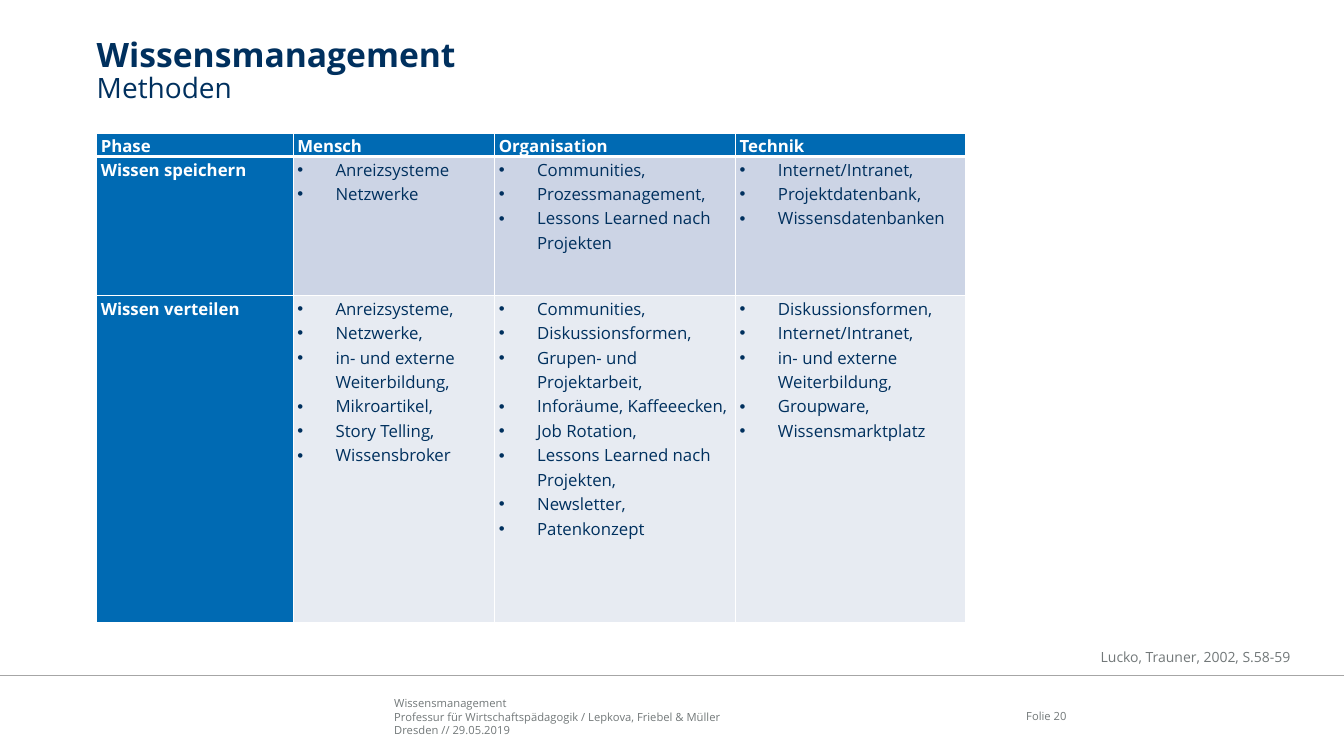
from dataclasses import dataclass

from lxml import etree
from pptx import Presentation
from pptx.dml.color import RGBColor
from pptx.enum.shapes import MSO_CONNECTOR
from pptx.enum.text import MSO_ANCHOR, PP_ALIGN
from pptx.oxml.ns import qn
from pptx.util import Emu, Inches, Pt

STRAIGHT = MSO_CONNECTOR.STRAIGHT
TOP, MIDDLE = MSO_ANCHOR.TOP, MSO_ANCHOR.MIDDLE
LEFT, RIGHT = PP_ALIGN.LEFT, PP_ALIGN.RIGHT

FONT = "Open Sans"
NAVY, BLUE, GREY, RULE, WHITE = "00305E", "006AB3", "727879", "A6A6A6", "FFFFFF"
BAND_FILLS = ["CCD4E5", "E7EBF2"]
INDENT = Inches(0.38)

# Percentages of the slide's width and height
MARGIN, TABLE_TOP, RULE_Y = 7.2, 17.6, 89.33
COLUMNS = [14.62, 15, 17.92, 17.1]
ROWS = [3.1, 18.4, 43.2]

HEADINGS = ["Phase", "Mensch", "Organisation", "Technik"]
PHASES = {
    "Wissen speichern": [
        ["Anreizsysteme", "Netzwerke"],
        ["Communities,", "Prozessmanagement,", "Lessons Learned nach Projekten"],
        ["Internet/Intranet,", "Projektdatenbank,", "Wissensdatenbanken"],
    ],
    "Wissen verteilen": [
        ["Anreizsysteme,", "Netzwerke,", "in- und externe Weiterbildung,",
         "Mikroartikel,", "Story Telling,", "Wissensbroker"],
        ["Communities,", "Diskussionsformen,", "Grupen- und Projektarbeit,",
         "Inforäume, Kaffeeecken,", "Job Rotation,",
         "Lessons Learned nach Projekten,", "Newsletter,", "Patenkonzept"],
        ["Diskussionsformen,", "Internet/Intranet,",
         "in- und externe Weiterbildung,", "Groupware,", "Wissensmarktplatz"],
    ],
}


@dataclass
class Line:
    text: str
    size: float
    color: str = GREY
    bold: bool = False


@dataclass
class TextBox:
    """A text box whose place is given in percent of the slide."""
    left: float
    top: float
    width: float
    height: float
    lines: list[Line]
    anchor: MSO_ANCHOR = MIDDLE
    align: PP_ALIGN = LEFT
    spacing: float = 1.0


TEXT_BOXES = [
    TextBox(MARGIN, 5.07, 86.78, 10,
            [Line("Wissensmanagement", 24, NAVY, True), Line("Methoden", 20, NAVY)],
            anchor=TOP, spacing=0.9),
    TextBox(81.9, 83.73, 16.5, 6.4, [Line("Lucko, Trauner, 2002, S.58-59", 10)]),
    TextBox(29.33, 92.13, 42.53, 5.33,
            [Line("Wissensmanagement", 8),
             Line("Professur für Wirtschaftspädagogik / Lepkova, Friebel & Müller", 8),
             Line("Dresden // 29.05.2019", 8)]),
    TextBox(73.58, 92, 5.78, 5.33, [Line("Folie 20", 8)], align=RIGHT),
]

prs = Presentation()
prs.slide_width, prs.slide_height = Inches(13.33), Inches(7.5)
s = prs.slides.add_slide(prs.slide_layouts[6])


def rgb(color: str) -> RGBColor:
    return RGBColor.from_string(color)


def x(percent: float) -> Emu:
    return Emu(round(prs.slide_width * percent / 100))


def y(percent: float) -> Emu:
    return Emu(round(prs.slide_height * percent / 100))


def apply(target, values: dict) -> None:
    for name, value in values.items():
        setattr(target, name, value)


def write(tf, lines: list[Line], spacing: float, align=LEFT, bullets=False) -> None:
    """Fill a text frame with one paragraph per line."""
    for i, line in enumerate(lines):
        p = tf.paragraphs[0] if i == 0 else tf.add_paragraph()
        apply(p, {"alignment": align, "line_spacing": spacing})
        if bullets:
            pPr = p._p.get_or_add_pPr()
            pPr.set("marL", str(INDENT))
            pPr.set("indent", str(-INDENT))
            etree.SubElement(pPr, qn("a:buFont"), typeface="Arial")
            etree.SubElement(pPr, qn("a:buChar"), char="•")
        r = p.add_run()
        r.text = line.text
        apply(r.font, {"name": FONT, "size": Pt(line.size), "bold": line.bold})
        r.font.color.rgb = rgb(line.color)


def add_text_box(box: TextBox) -> None:
    sp = s.shapes.add_textbox(x(box.left), y(box.top), x(box.width), y(box.height))
    tf = sp.text_frame
    apply(tf, {"word_wrap": True, "vertical_anchor": box.anchor, "margin_left": 0,
               "margin_right": 0, "margin_top": 0, "margin_bottom": 0})
    write(tf, box.lines, box.spacing, box.align)


def set_borders(cell, widths: dict[str, float]) -> None:
    tcPr = cell._tc.get_or_add_tcPr()
    for side, width in widths.items():
        ln = etree.SubElement(tcPr, qn(f"a:ln{side}"), w=str(Pt(width)))
        fill = etree.SubElement(ln, qn("a:solidFill"))
        etree.SubElement(fill, qn("a:srgbClr"), val=WHITE)


def fill_cell(cell, texts: list[str], fill: str, row: int, bullets: bool) -> None:
    apply(cell, {"margin_left": Inches(0.04), "margin_right": Inches(0.04),
                 "margin_top": 0, "margin_bottom": 0})
    set_borders(cell, {"L": 1, "R": 1, "T": 3 if row == 1 else 1,
                       "B": 3 if row == 0 else 1})
    cell.fill.solid()
    cell.fill.fore_color.rgb = rgb(fill)
    color = NAVY if bullets else WHITE
    lines = [Line(text, 12, color, not bullets) for text in texts]
    write(cell.text_frame, lines, 1.07, bullets=bullets)


def add_methods_table() -> None:
    table = s.shapes.add_table(len(ROWS), len(COLUMNS), x(MARGIN), y(TABLE_TOP),
                               x(sum(COLUMNS)), y(sum(ROWS))).table
    for column, width in zip(table.columns, COLUMNS):
        column.width = x(width)
    for row, height in zip(table.rows, ROWS):
        row.height = y(height)
    content = [[[heading] for heading in HEADINGS]]
    content += [[[phase], *methods] for phase, methods in PHASES.items()]
    for i, cells in enumerate(content):
        for j, texts in enumerate(cells):
            body = i > 0 and j > 0
            fill = BAND_FILLS[i - 1] if body else BLUE
            fill_cell(table.cell(i, j), texts, fill, i, body)


def add_footer_rule() -> None:
    line = s.shapes.add_connector(STRAIGHT, 0, y(RULE_Y), x(100), y(RULE_Y))
    line.line.color.rgb = rgb(RULE)
    line.line.width = Pt(1)
    etree.SubElement(line._element.spPr, qn("a:effectLst"))


def main() -> None:
    add_footer_rule()
    for box in TEXT_BOXES:
        add_text_box(box)
    add_methods_table()
    prs.save("out.pptx")


if __name__ == "__main__":
    main()
